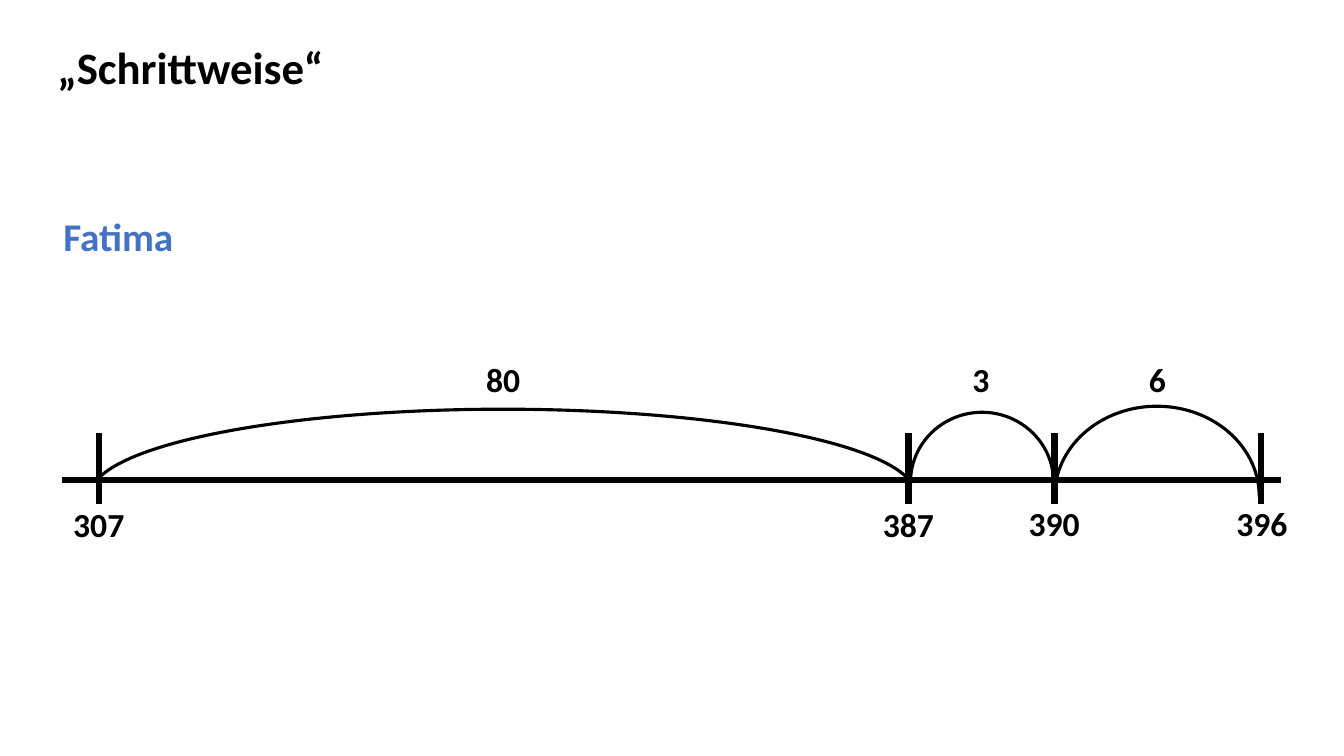
from dataclasses import dataclass

from lxml.etree import SubElement
from pptx import Presentation
from pptx.dml.color import RGBColor
from pptx.enum.shapes import MSO_CONNECTOR as Connector, MSO_SHAPE as Shape
from pptx.enum.text import MSO_AUTO_SIZE as AutoSize, PP_ALIGN as Align
from pptx.oxml.ns import qn
from pptx.slide import Slide
from pptx.util import Emu, Pt

PX = 9144
BLACK = RGBColor(0x00, 0x00, 0x00)
BLUE = RGBColor(0x44, 0x72, 0xC4)
AXIS_Y = 476
TICK_TOP, TICK_BOTTOM = 430, 500


@dataclass(frozen=True)
class Label:
    text: str
    left: int
    top: int
    width: int
    height: int = 50
    size: int = 24
    color: RGBColor = BLACK
    align: Align = Align.CENTER


@dataclass(frozen=True)
class Jump:
    left: int
    top: int
    width: int
    height: int
    start: float
    end: float


TICKS = (98, 901, 1046, 1251)
JUMPS = (
    Jump(90, 406, 818, 170, 109.36, 214.93),
    Jump(903, 409, 142, 139, 107.29, 215.62),
    Jump(1046, 403, 203, 179, 107.88, 0.02),
)
LABELS = (
    Label("307", 60, 495, 76),
    Label("387", 863, 495, 76),
    Label("390", 1007, 494, 77),
    Label("396", 1213, 494, 77),
    Label("80", 448, 351, 102),
    Label("3", 930, 351, 86),
    Label("6", 1105, 351, 86),
    Label("„Schrittweise“", 47, 34, 376, 64, 32, align=Align.LEFT),
    Label("Fatima", 53, 206, 141, 57, 28, BLUE, Align.LEFT),
)


def px(*lengths: int) -> list[Emu]:
    """Turn px lengths into EMU."""
    return [Emu(length * PX) for length in lengths]


def draw_line(page: Slide, x1: int, y1: int, x2: int, y2: int) -> None:
    """Draw a thick black line without shadow."""
    line = page.shapes.add_connector(Connector.STRAIGHT, *px(x1, y1, x2, y2))
    line.line.color.rgb = BLACK
    line.line.width = Pt(4.5)
    SubElement(line._element.spPr, qn("a:effectLst"))


def draw_jump(page: Slide, jump: Jump) -> None:
    """Draw one arc above the number line."""
    arc = page.shapes.add_shape(
        Shape.ARC, *px(jump.left, jump.top, jump.width, jump.height))
    arc.adjustments[0], arc.adjustments[1] = jump.start, jump.end
    arc.shadow.inherit = False
    arc.fill.background()
    arc.line.color.rgb = BLACK
    arc.line.width = Pt(2.25)


def draw_label(page: Slide, label: Label) -> None:
    """Write one bold line of text."""
    box = page.shapes.add_textbox(
        *px(label.left, label.top, label.width, label.height))
    box.text_frame.word_wrap = True
    box.text_frame.auto_size = AutoSize.SHAPE_TO_FIT_TEXT
    para = box.text_frame.paragraphs[0]
    para.alignment = label.align
    span = para.add_run()
    span.text = label.text
    formats = {"name": "Calibri", "size": Pt(label.size), "bold": True}
    for name, value in formats.items():
        setattr(span.font, name, value)
    span.font.color.rgb = label.color


def main() -> None:
    """Build the number line slide."""
    deck = Presentation()
    deck.slide_width, deck.slide_height = px(1333, 750)
    page = deck.slides.add_slide(deck.slide_layouts[6])
    draw_line(page, 62, AXIS_Y, 1271, AXIS_Y)
    for x in TICKS:
        draw_line(page, x, TICK_TOP, x, TICK_BOTTOM)
    for jump in JUMPS:
        draw_jump(page, jump)
    for label in LABELS:
        draw_label(page, label)
    deck.save("out.pptx")


if __name__ == "__main__":
    main()
